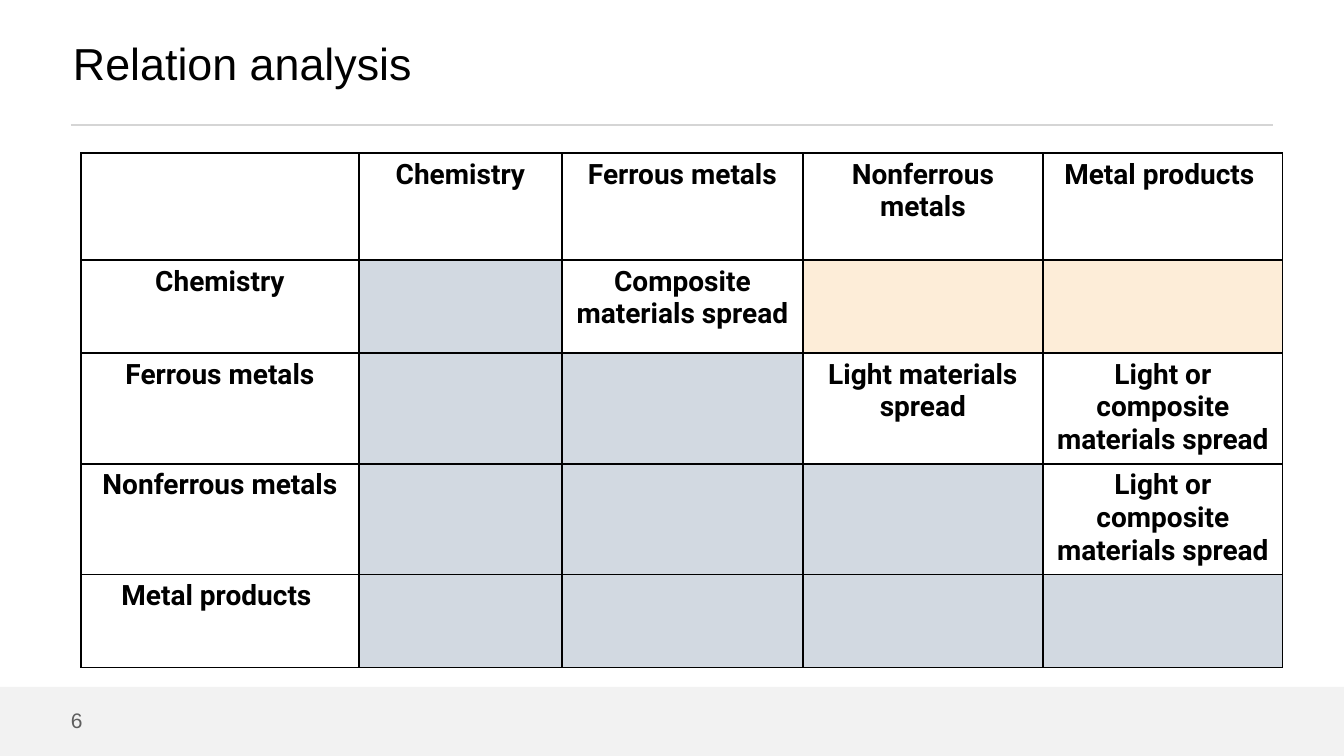
from dataclasses import dataclass
from itertools import product

from lxml.etree import SubElement
from pptx import Presentation
from pptx.dml.color import RGBColor
from pptx.enum.shapes import MSO_CONNECTOR as Connector, MSO_SHAPE as Shape
from pptx.enum.text import MSO_ANCHOR as Anchor, PP_ALIGN as Align
from pptx.oxml.ns import qn
from pptx.util import Emu, Pt

PX_PER_INCH = 100.8
COLORS = {
    "black": "000000",
    "rule": "D5D5D5",
    "footer": "F2F2F2",
    "number": "5E5E5E",
    "mirrored": "D2D9E1",
    "open": "FDEDD8",
}


@dataclass(frozen=True)
class TextStyle:
    font: str
    size: int
    color: str
    bold: bool = False


@dataclass(frozen=True)
class Box:
    left: int
    top: int
    width: int
    height: int

    def emu(self) -> tuple[Emu, ...]:
        return tuple(px(n) for n in (self.left, self.top, self.width, self.height))


TITLE_STYLE = TextStyle("Arial", 32, "black")
NUMBER_STYLE = TextStyle("Arial", 15, "number")
CELL_STYLE = TextStyle("Roboto", 20, "black", True)

INDUSTRIES = ["Chemistry", "Ferrous metals", "Nonferrous metals", "Metal products "]
RELATIONS = {
    (1, 2): "Composite materials spread",
    (2, 3): "Light materials spread",
    (2, 4): "Light or composite materials spread",
    (3, 4): "Light or composite materials spread",
}
COLUMN_WIDTHS = [278, 203, 241, 240, 240]
ROW_HEIGHTS = [107, 93, 109, 109, 93]


def px(length: int) -> Emu:
    return Emu(round(length * 914400 / PX_PER_INCH))


def rgb(name: str) -> RGBColor:
    return RGBColor.from_string(COLORS[name])


def write(frame, text: str, style: TextStyle, align: Align = Align.LEFT) -> None:
    para = frame.paragraphs[0]
    para.alignment = align
    span = para.add_run()
    span.text = text
    values = {"name": style.font, "size": Pt(style.size), "bold": style.bold}
    for name, value in values.items():
        setattr(span.font, name, value)
    span.font.color.rgb = rgb(style.color)


def set_frame(frame, wrap: bool) -> None:
    values = {
        "word_wrap": wrap,
        "vertical_anchor": Anchor.MIDDLE,
        "margin_left": 0,
        "margin_top": 0,
        "margin_right": 0,
        "margin_bottom": 0,
    }
    for name, value in values.items():
        setattr(frame, name, value)


def add_borders(cell) -> None:
    properties = cell._tc.get_or_add_tcPr()
    for side in ("a:lnL", "a:lnR", "a:lnT", "a:lnB"):
        line = SubElement(properties, qn(side), w=str(Pt(1)))
        fill = SubElement(line, qn("a:solidFill"))
        SubElement(fill, qn("a:srgbClr"), val=COLORS["black"])


def add_frame_parts(page) -> None:
    # Rule below the title
    rule = page.shapes.add_connector(Connector.STRAIGHT, px(71), px(125), px(1273), px(125))
    rule.line.color.rgb = rgb("rule")
    rule.line.width = Pt(1.5)
    SubElement(rule._element.spPr, qn("a:effectLst"))

    # Footer band and page number
    band = page.shapes.add_shape(Shape.RECTANGLE, *Box(0, 687, 1344, 69).emu())
    band.shadow.inherit = False
    band.fill.solid()
    band.fill.fore_color.rgb = rgb("footer")
    band.line.fill.background()
    number = page.shapes.add_textbox(*Box(71, 708, 12, 25).emu())
    set_frame(number.text_frame, wrap=False)
    write(number.text_frame, "6", NUMBER_STYLE)


def add_title(page, text: str) -> None:
    title = page.shapes.title
    title.left, title.top, title.width, title.height = Box(73, 0, 1015, 125).emu()
    set_frame(title.text_frame, wrap=True)
    write(title.text_frame, text, TITLE_STYLE)


def cell_text(row: int, column: int) -> str:
    if row and column:
        return RELATIONS.get((row, column), "")
    return INDUSTRIES[row + column - 1] if row + column else ""


def add_matrix(page) -> None:
    size = len(INDUSTRIES) + 1
    place = Box(81, 153, sum(COLUMN_WIDTHS), sum(ROW_HEIGHTS))
    table = page.shapes.add_table(size, size, *place.emu()).table
    table.first_row = table.horz_banding = False
    for column, width in zip(table.columns, COLUMN_WIDTHS):
        column.width = px(width)
    for row, height in zip(table.rows, ROW_HEIGHTS):
        row.height = px(height)

    for row, column in product(range(size), repeat=2):
        cell = table.cell(row, column)
        add_borders(cell)
        text = cell_text(row, column)
        if text:
            write(cell.text_frame, text, CELL_STYLE, Align.CENTER)
        if text or row + column == 0:
            cell.fill.background()
        else:
            cell.fill.solid()
            cell.fill.fore_color.rgb = rgb("mirrored" if column <= row else "open")


def main() -> None:
    deck = Presentation()
    deck.slide_width, deck.slide_height = px(1344), px(756)
    page = deck.slides.add_slide(deck.slide_layouts[5])
    add_frame_parts(page)
    add_title(page, "Relation analysis")
    add_matrix(page)
    deck.save("out.pptx")


if __name__ == "__main__":
    main()
